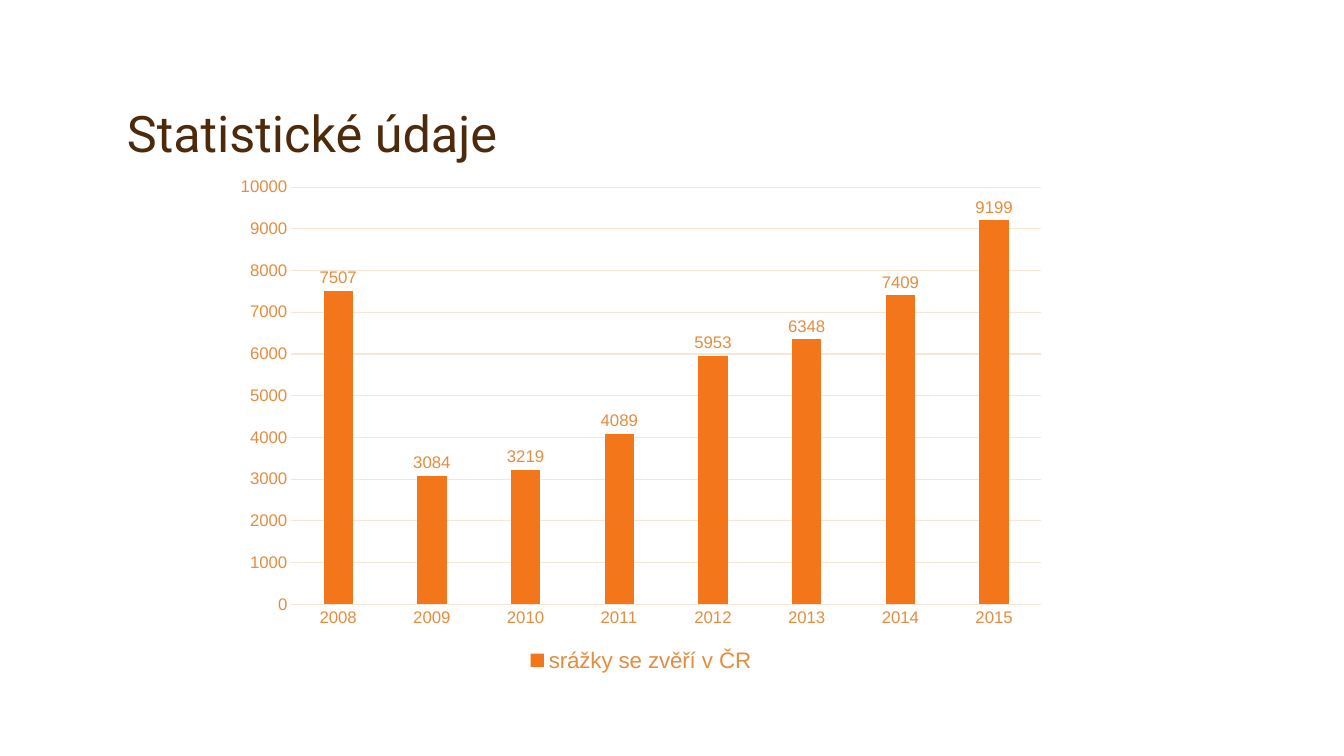
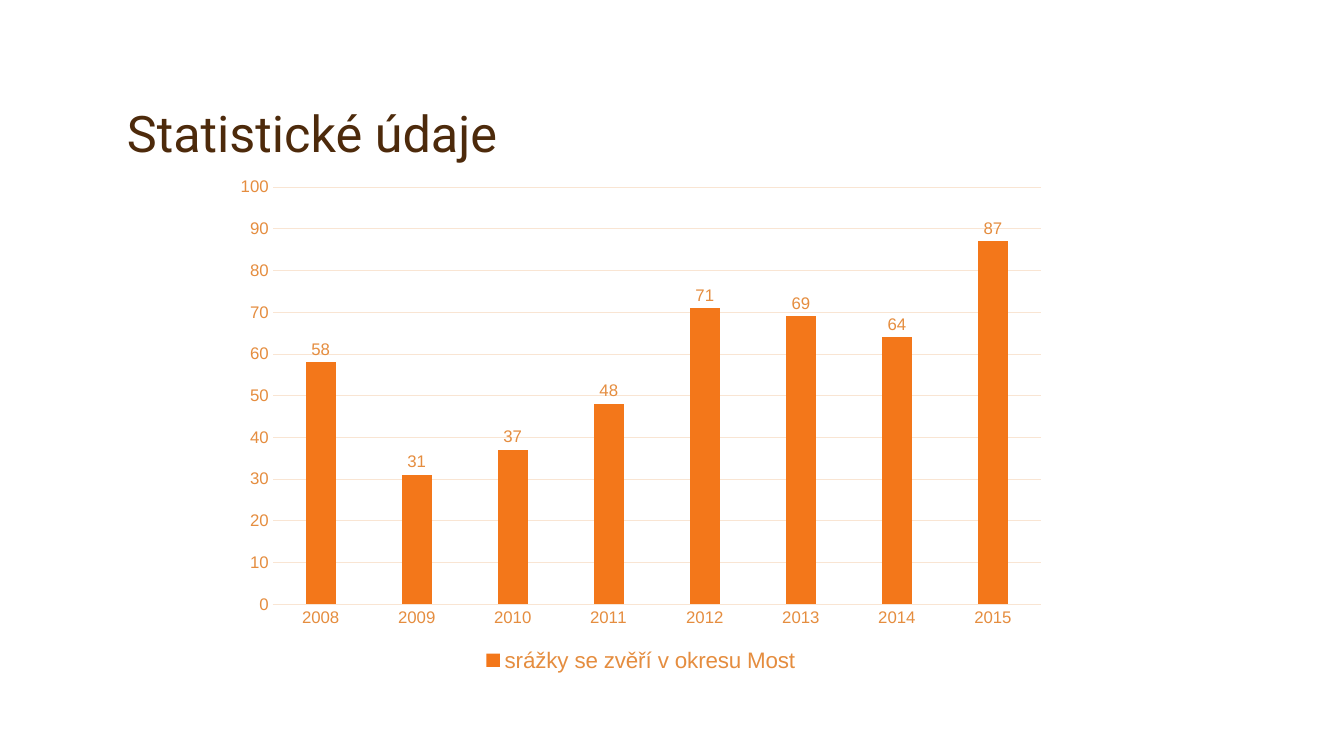
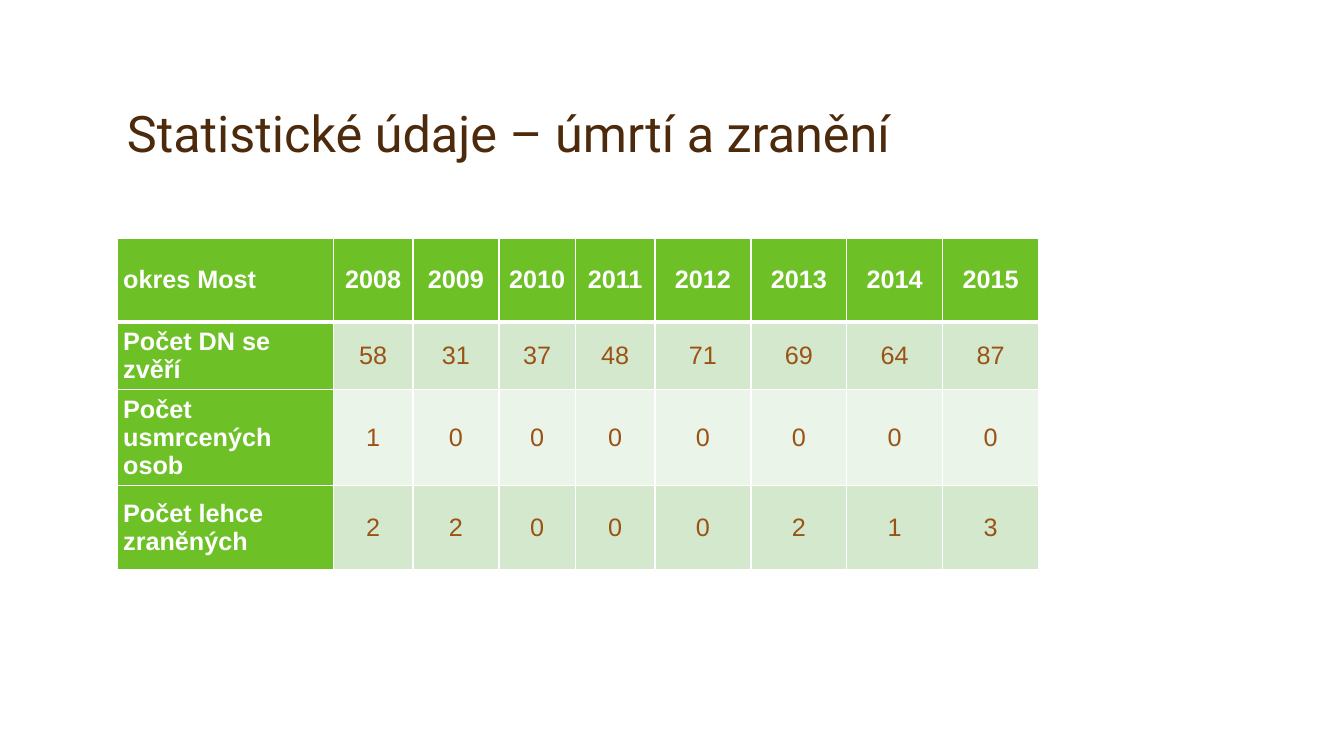
from lxml import etree
from pptx import Presentation
from pptx.chart.data import CategoryChartData as ChartData
from pptx.dml.color import RGBColor
from pptx.enum.chart import XL_CHART_TYPE as Kind, XL_LABEL_POSITION as Spot
from pptx.enum.chart import XL_LEGEND_POSITION as Side, XL_TICK_MARK as Tick
from pptx.enum.text import MSO_ANCHOR as Anchor, PP_ALIGN as Align
from pptx.oxml.ns import qn
from pptx.util import Pt

WHITE = RGBColor(0xFF, 0xFF, 0xFF)
DARK = RGBColor(0x4D, 0x2A, 0x0B)
BROWN = RGBColor(0x9A, 0x53, 0x15)
AMBER = RGBColor(0xE5, 0x8D, 0x3F)
ORANGE = RGBColor(0xF3, 0x77, 0x1A)
PEACH = RGBColor(0xF9, 0xE5, 0xD3)
GREEN = RGBColor(0x6D, 0xC0, 0x25)
LIGHT = RGBColor(0xD4, 0xE8, 0xCD)
PALE = RGBColor(0xEB, 0xF4, 0xE8)

YEARS = ["2008", "2009", "2010", "2011", "2012", "2013", "2014", "2015"]
LOCAL = [58, 31, 37, 48, 71, 69, 64, 87]


def style(font, size, color, name="Arial", bold=False):
    font.size = Pt(size)
    font.color.rgb = color
    font.name = name
    font.bold = bold


def write(frame, text, align=Align.LEFT, **look):
    para = frame.paragraphs[0]
    para.alignment = align
    run = para.add_run()
    run.text = text
    style(run.font, **look)


deck = Presentation()
deck.slide_width, deck.slide_height = Pt(960), Pt(540)

slides = []
for head in ["Statistické údaje", "Statistické údaje", "Statistické údaje – úmrtí a zranění"]:
    slide = deck.slides.add_slide(deck.slide_layouts[5])
    title = slide.shapes.title
    title.left, title.top, title.width, title.height = Pt(83.5), Pt(24), Pt(792), Pt(95.5)
    title.text_frame.vertical_anchor = Anchor.BOTTOM
    write(title.text_frame, head, size=36, color=DARK, name="Roboto")
    slides.append(slide)

charts = [
    ("srážky se zvěří v ČR", [7507, 3084, 3219, 4089, 5953, 6348, 7409, 9199], 10000),
    ("srážky se zvěří v okresu Most", LOCAL, 100),
]
for slide, (name, vals, peak) in zip(slides, charts):
    data = ChartData()
    data.categories = YEARS
    data.add_series(name, vals)
    chart = slide.shapes.add_chart(
        Kind.COLUMN_CLUSTERED, Pt(160), Pt(120), Pt(595.5), Pt(363.5), data).chart
    style(chart.font, 10, BROWN, "Roboto")
    chart.has_title = False
    chart.has_legend = True
    chart.legend.position = Side.BOTTOM
    chart.legend.include_in_layout = False
    style(chart.legend.font, 16, AMBER)

    years, scale = chart.category_axis, chart.value_axis
    for axis in (years, scale):
        axis.major_tick_mark = axis.minor_tick_mark = Tick.NONE
        style(axis.tick_labels.font, 12, AMBER)
    scale.minimum_scale, scale.maximum_scale, scale.major_unit = 0, peak, peak / 10
    scale.format.line.fill.background()
    for line in (years.format.line, scale.major_gridlines.format.line):
        line.color.rgb = PEACH
        line.width = Pt(0.75)

    plot = chart.plots[0]
    plot.vary_by_categories = False
    plot.gap_width, plot.overlap = 219, -27
    bars = plot.series[0].format.fill
    bars.solid()
    bars.fore_color.rgb = ORANGE
    plot.has_data_labels = True
    labels = plot.data_labels
    labels.show_value = True
    labels.position = Spot.OUTSIDE_END
    style(labels.font, 12, AMBER)

rows = [
    ["okres Most", *YEARS],
    ["Počet DN se zvěří", *LOCAL],
    ["Počet usmrcených osob", 1, 0, 0, 0, 0, 0, 0, 0],
    ["Počet lehce zraněných", 2, 2, 0, 0, 0, 2, 1, 3],
]
wide = [154, 57, 61.5, 54.5, 57, 68.5, 68.5, 68.5, 68.5]
tall = [60, 48, 68, 60]
table = slides[2].shapes.add_table(
    len(rows), len(wide), Pt(84), Pt(170), Pt(sum(wide)), Pt(sum(tall))).table
for col, width in zip(table.columns, wide):
    col.width = Pt(width)
for row, height in zip(table.rows, tall):
    row.height = Pt(height)

for r, row in enumerate(rows):
    for c, value in enumerate(row):
        cell = table.cell(r, c)
        main = r == 0 or c == 0
        cell.fill.solid()
        cell.fill.fore_color.rgb = GREEN if main else LIGHT if r % 2 else PALE
        cell.vertical_anchor = Anchor.MIDDLE
        cell.margin_left = cell.margin_right = cell.margin_top = cell.margin_bottom = Pt(4)
        write(cell.text_frame, str(value), Align.CENTER if c else Align.LEFT,
              size=18, color=WHITE if main else BROWN, bold=main)
        props = cell._tc.get_or_add_tcPr()
        for i, side in enumerate("LRTB"):
            thick = (r, side) in [(0, "B"), (1, "T")]
            edge = etree.Element(qn("a:ln" + side), w=str(Pt(3 if thick else 1)))
            fill = etree.SubElement(edge, qn("a:solidFill"))
            etree.SubElement(fill, qn("a:srgbClr"), val=str(WHITE))
            props.insert(i, edge)

deck.save("out.pptx")
